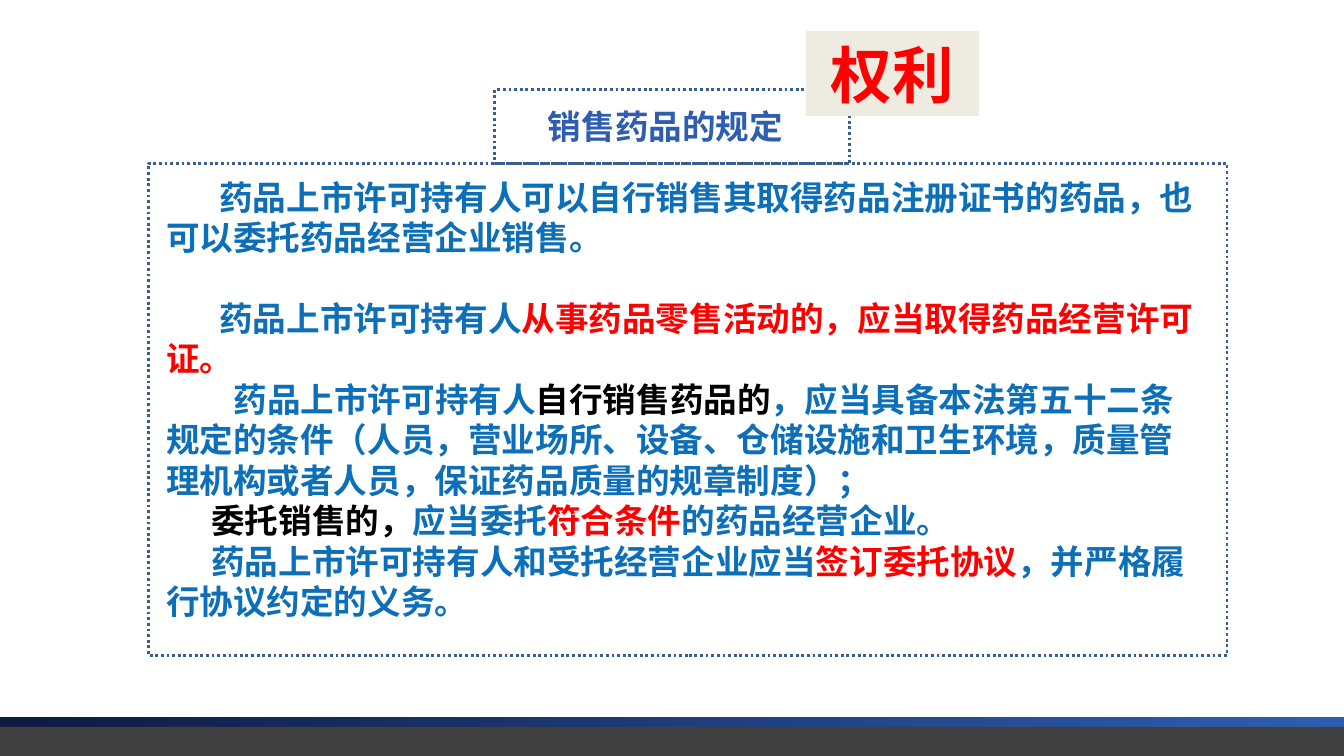
from dataclasses import dataclass
from typing import Optional

import pptx
import pptx.dml.color
import pptx.enum.dml
import pptx.enum.shapes
import pptx.enum.text
import pptx.oxml
import pptx.oxml.ns
import pptx.util
from pptx.dml.color import RGBColor
from pptx.util import Inches

NAVY = RGBColor(0x0E, 0x1A, 0x40)
ROYAL = RGBColor(0x2F, 0x5E, 0xB0)
CHARCOAL = RGBColor(0x40, 0x40, 0x40)
FRAME_BLUE = RGBColor(0x3A, 0x5F, 0x8C)
BLUE = RGBColor(0x0D, 0x6F, 0xB8)
RED = RGBColor(0xFF, 0x00, 0x00)
BLACK = RGBColor(0x00, 0x00, 0x00)
CREAM = RGBColor(0xEE, 0xEC, 0xE1)
CJK_FONT = "Noto Sans CJK SC"
LINE_PITCH = 28.9


@dataclass
class Box:
    left: float
    top: float
    width: float
    height: float

    def lengths(self) -> tuple:
        return tuple(Inches(n) for n in (self.left, self.top, self.width, self.height))


@dataclass
class Clause:
    indent: float
    runs: list
    space_before: float = 0


CLAUSES = [
    Clause(0.53, [("药品上市许可持有人可以自行销售其取得药品注册证书的药品，也可以委托药品经营企业销售。", BLUE)]),
    Clause(0.53, [("药品上市许可持有人", BLUE),
                  ("从事药品零售活动的，应当取得药品经营许可证。", RED)], LINE_PITCH),
    Clause(0.67, [("药品上市许可持有人", BLUE),
                  ("自行销售药品的", BLACK),
                  ("，应当具备本法第五十二条规定的条件（人员，营业场所、设备、仓储设施和卫生环境，"
                   "质量管理机构或者人员，保证药品质量的规章制度）；", BLUE)]),
    Clause(0.45, [("委托销售的，", BLACK),
                  ("应当委托", BLUE),
                  ("符合条件", RED),
                  ("的药品经营企业。", BLUE)]),
    Clause(0.45, [("药品上市许可持有人和受托经营企业应当", BLUE),
                  ("签订委托协议", RED),
                  ("，并严格履行协议约定的义务。", BLUE)]),
]


def add_rectangle(slide, box: Box, fill: Optional[RGBColor] = None, dotted: bool = False):
    rectangle = slide.shapes.add_shape(
        pptx.enum.shapes.MSO_SHAPE.RECTANGLE, *box.lengths())
    rectangle.shadow.inherit = False
    if fill is None:
        rectangle.fill.background()
    else:
        rectangle.fill.solid()
        rectangle.fill.fore_color.rgb = fill
    if dotted:
        rectangle.line.color.rgb = FRAME_BLUE
        rectangle.line.width = pptx.util.Pt(2)
        rectangle.line.dash_style = pptx.enum.dml.MSO_LINE.ROUND_DOT
    else:
        rectangle.line.fill.background()
    return rectangle


def add_text(paragraph, text: str, *, color: RGBColor, size: float = 24,
             latin: str = CJK_FONT, tracking: float = 0) -> None:
    run = paragraph.add_run()
    run.text = text
    run.font.size = pptx.util.Pt(size)
    run.font.bold = True
    run.font.color.rgb = color
    run.font.name = latin
    properties = run.font._element
    east_asian = pptx.oxml.parse_xml(
        f'<a:ea {pptx.oxml.ns.nsdecls("a")} typeface="{CJK_FONT}"/>')
    properties.append(east_asian)
    if tracking:
        properties.set("spc", str(round(tracking * 100)))


def add_clauses(slide, box: Box, clauses: list, wrap: bool = True) -> None:
    frame = slide.shapes.add_textbox(*box.lengths()).text_frame
    frame.word_wrap = wrap
    for index, clause in enumerate(clauses):
        paragraph = frame.add_paragraph() if index else frame.paragraphs[0]
        paragraph.line_spacing = pptx.util.Pt(LINE_PITCH)
        if clause.space_before:
            paragraph.space_before = pptx.util.Pt(clause.space_before)
        if clause.indent:
            paragraph._p.get_or_add_pPr().set("indent", str(Inches(clause.indent)))
        for text, color in clause.runs:
            add_text(paragraph, text, color=color)


def add_footer(slide) -> None:
    accent = add_rectangle(slide, Box(0, 7.11, 13.34, 0.39), NAVY)
    accent.fill.gradient()
    accent.fill.gradient_angle = 0
    for stop, color in zip(accent.fill.gradient_stops, (NAVY, ROYAL)):
        stop.color.rgb = color
    add_rectangle(slide, Box(0, 7.21, 13.34, 0.29), CHARCOAL)


def add_badge(slide) -> None:
    badge = add_rectangle(slide, Box(8, 0.31, 1.72, 0.84), CREAM)
    frame = badge.text_frame
    frame.vertical_anchor = pptx.enum.text.MSO_ANCHOR.MIDDLE
    paragraph = frame.paragraphs[0]
    paragraph.alignment = pptx.enum.text.PP_ALIGN.CENTER
    add_text(paragraph, "权利", color=RED, size=44, latin="Calibri", tracking=0.5)


def main() -> None:
    presentation = pptx.Presentation()
    presentation.slide_width = Inches(13.34)
    presentation.slide_height = Inches(7.5)
    slide = presentation.slides.add_slide(presentation.slide_layouts[6])
    add_footer(slide)
    add_rectangle(slide, Box(4.91, 0.89, 3.52, 0.73), dotted=True)
    add_rectangle(slide, Box(1.47, 1.62, 10.71, 4.88), dotted=True)
    add_clauses(slide, Box(1.55, 1.7, 10.5, 4.54), CLAUSES)
    heading = Clause(0, [("销售药品的规定", ROYAL)])
    add_clauses(slide, Box(5.34, 1, 2.66, 0.5), [heading], wrap=False)
    add_badge(slide)
    presentation.save("out.pptx")


if __name__ == "__main__":
    main()
